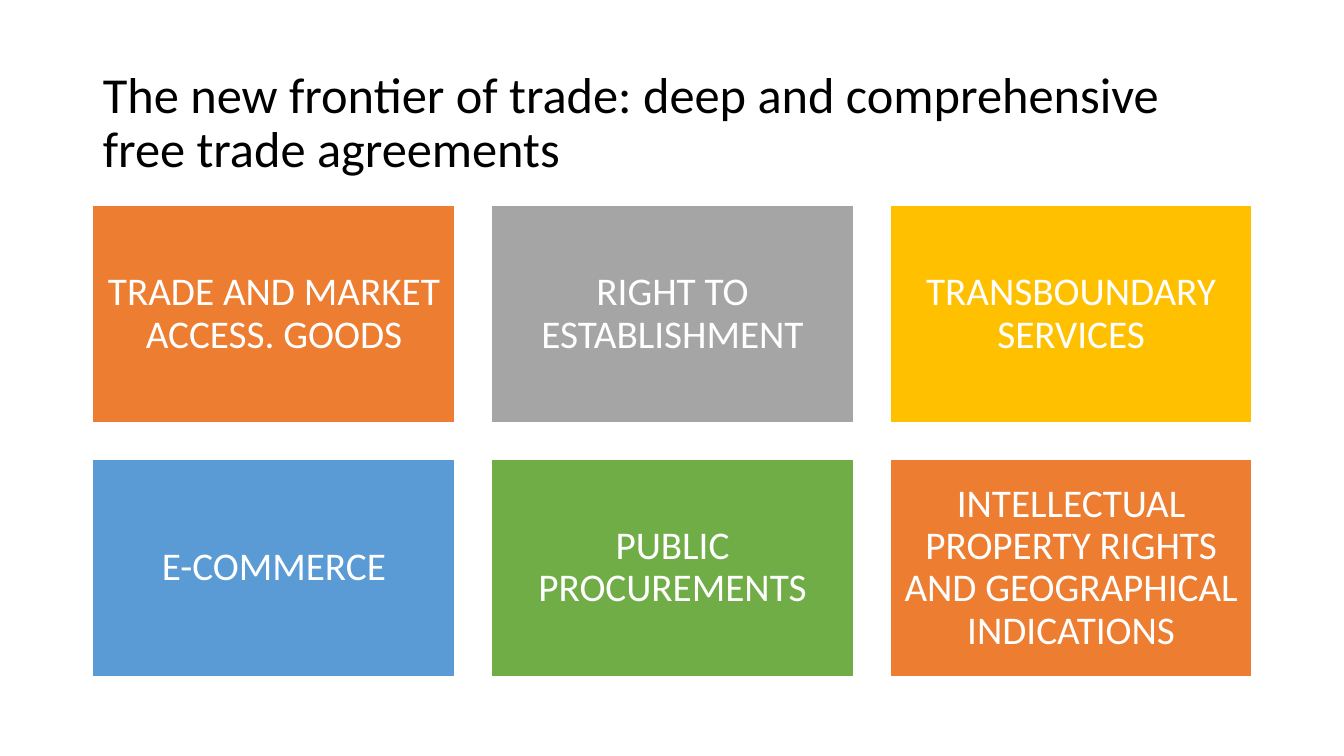
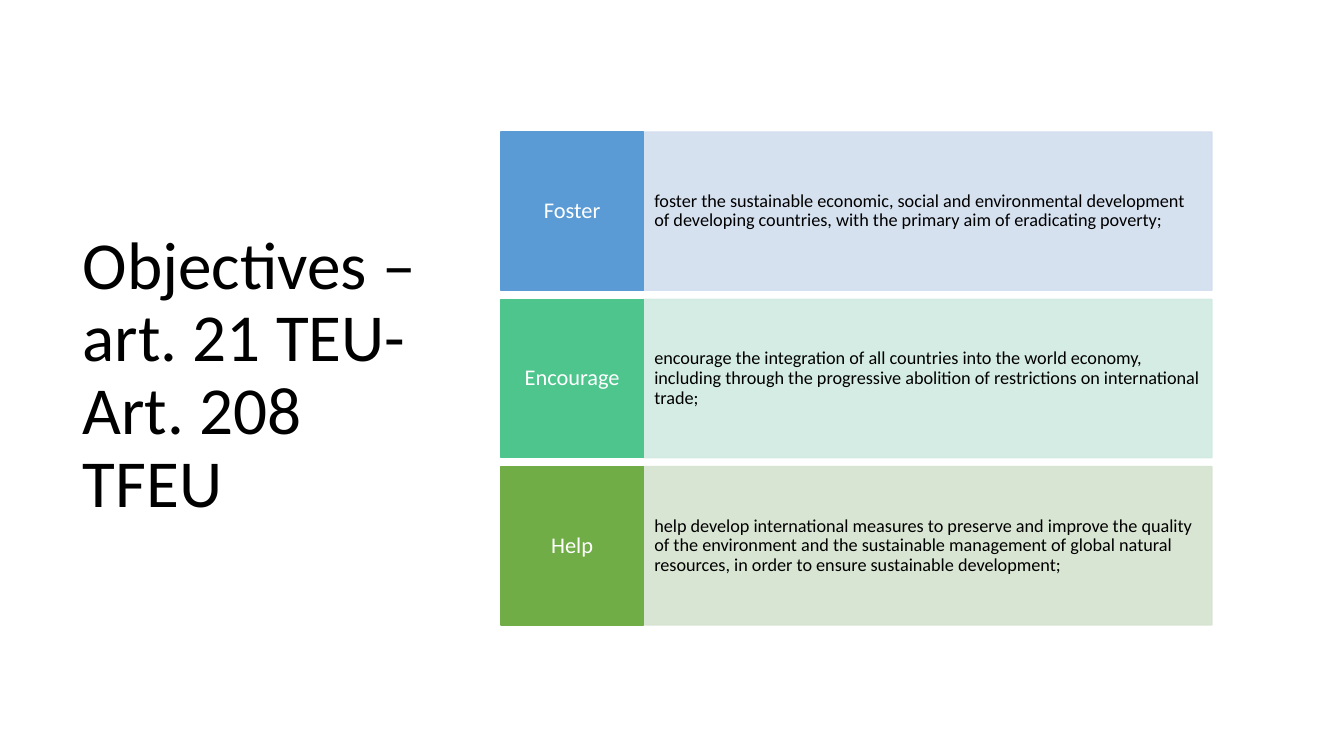
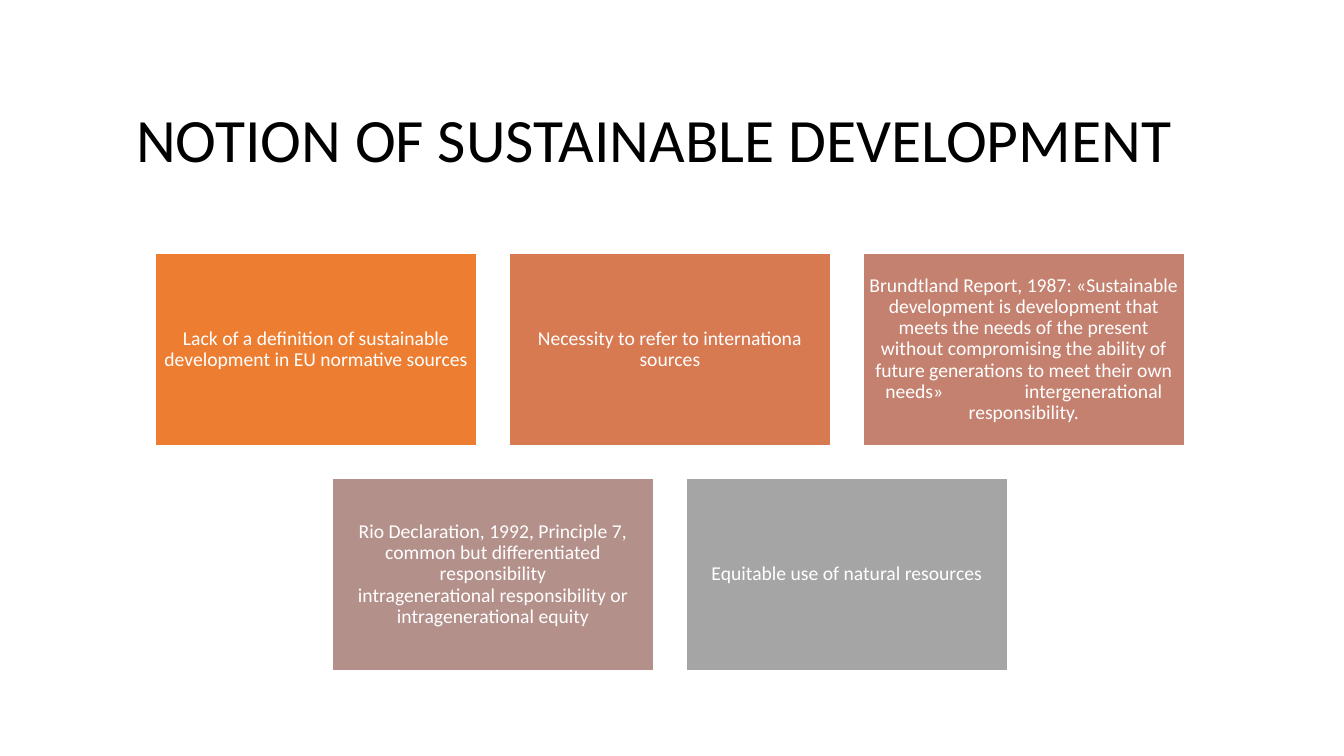
from lxml.etree import SubElement
from pptx import Presentation
from pptx.dml.color import RGBColor
from pptx.enum.shapes import MSO_SHAPE as Shape
from pptx.enum.text import MSO_ANCHOR as Anchor, MSO_AUTO_SIZE as AutoSize, PP_ALIGN as Align
from pptx.oxml.ns import qn
from pptx.util import Inches, Pt

FONT = "Calibri"
BLACK, WHITE = "000000", "FFFFFF"
ORANGE, GREY, GOLD = "ED7D31", "A5A5A5", "FFC000"
BLUE, GREEN, TEAL = "5B9BD5", "70AD47", "4DC58D"
TITLE_ONLY = 5
WIDE_GAP = 55

AGREEMENT_CARDS = [
    [("TRADE AND MARKET ACCESS. GOODS", ORANGE),
     ("RIGHT TO ESTABLISHMENT", GREY),
     ("TRANSBOUNDARY SERVICES", GOLD)],
    [("E-COMMERCE", BLUE),
     ("PUBLIC PROCUREMENTS", GREEN),
     ("INTELLECTUAL PROPERTY RIGHTS AND GEOGRAPHICAL INDICATIONS", ORANGE)],
]

OBJECTIVES = [
    ("Foster", BLUE, "D2DEEF",
     "foster the sustainable economic, social and environmental development of "
     "developing countries, with the primary aim of eradicating poverty;"),
    ("Encourage", TEAL, "D0EAE1",
     "encourage the integration of all countries into the world economy, including "
     "through the progressive abolition of restrictions on international trade;"),
    ("Help", GREEN, "D5E3CF",
     "help develop international measures to preserve and improve the quality of the "
     "environment and the sustainable management of global natural resources, in order "
     "to ensure sustainable development;"),
]

NOTION_CARDS = [
    [("Lack of a definition of sustainable development in EU normative sources", ORANGE),
     ("Necessity to refer to internationa sources", "D87A51"),
     (("Brundtland Report, 1987: «Sustainable development is development that meets the "
       "needs of the present without compromising the ability of future generations to "
       "meet their own needs»", " ", "intergenerational responsibility."), "C48170")],
    [(("Rio Declaration, 1992, Principle 7, common but differentiated responsibility", " ",
       "intragenerational responsibility or intragenerational equity"), "B4908B"),
     ("Equitable use of natural resources", GREY)],
]


def paint(target, color):
    """Set a font, or a solid fill, to a hex colour."""
    if hasattr(target, "solid"):
        target.solid()
        target.fore_color.rgb = RGBColor.from_string(color)
    else:
        target.color.rgb = RGBColor.from_string(color)


def fade(shape, percent):
    """Give the fill and the line of a shape the same opacity."""
    for color in shape._element.spPr.iter(qn("a:srgbClr")):
        SubElement(color, qn("a:alpha")).set("val", str(percent * 1000))


def write(frame, text, size, color, align):
    """Fill a frame with one paragraph; a piece that is a single space becomes a wide gap."""
    frame.word_wrap = True
    frame.auto_size = AutoSize.NONE
    frame.vertical_anchor = Anchor.MIDDLE
    para = frame.paragraphs[0]
    para.alignment = align
    para.line_spacing = 0.9
    for piece in (text,) if isinstance(text, str) else text:
        span = para.add_run()
        span.text = piece
        span.font.name = FONT
        span.font.size = Pt(size)
        paint(span.font, color)
        if piece == " ":
            span.font._element.set("spc", str(WIDE_GAP * 100))


def add_page(deck, title, box, size):
    """Add a slide with its title placed in the given box."""
    page = deck.slides.add_slide(deck.slide_layouts[TITLE_ONLY])
    holder = page.shapes.title
    holder.left, holder.top, holder.width, holder.height = map(Inches, box)
    write(holder.text_frame, title, size, BLACK, Align.LEFT)
    return page


def add_block(page, box, text, fill, line, size, insets, color=WHITE, align=Align.CENTER):
    """Add a filled rectangle with text and the given side and top insets."""
    block = page.shapes.add_shape(Shape.RECTANGLE, *map(Inches, box))
    block.shadow.inherit = False
    paint(block.fill, fill)
    paint(block.line.fill, line)
    block.line.width = Pt(1)
    frame = block.text_frame
    frame.margin_left = frame.margin_right = Inches(insets[0])
    frame.margin_top = frame.margin_bottom = Inches(insets[1])
    write(frame, text, size, color, align)
    return block


def add_card_grid(page, left, top, width, rows, size, inset):
    """Lay out rows of cards, three to the full width, with shorter rows centred."""
    card_width = width / 3.2
    card_height, gap = card_width * 0.6, card_width * 0.1
    for row_index, row in enumerate(rows):
        row_width = len(row) * (card_width + gap) - gap
        start = left + (width - row_width) / 2
        y = top + row_index * (card_height + gap)
        for index, (text, fill) in enumerate(row):
            box = (start + index * (card_width + gap), y, card_width, card_height)
            add_block(page, box, text, fill, WHITE, size, (inset, inset))


def add_objective_rows(page, left, top, width, objectives):
    """Stack rows that pair a coloured label with a pale description."""
    row_height, step = 1.57, 1.66
    label_width = width * 0.2
    for index, (label, strong, pale, detail) in enumerate(objectives):
        y = top + index * step
        detail_box = (left + label_width, y, width - label_width, row_height)
        panel = add_block(page, detail_box, detail, pale, pale, 13, (0.11, 0.4),
                          BLACK, Align.LEFT)
        fade(panel, 90)
        label_box = (left, y, label_width, row_height)
        add_block(page, label_box, label, strong, strong, 16, (0.07, 0.15))


def main():
    """Build the three slides and save the deck."""
    deck = Presentation()
    deck.slide_width, deck.slide_height = Inches(13.33), Inches(7.5)

    agreements = add_page(
        deck, "The new frontier of trade: deep and comprehensive free trade agreements",
        (0.92, 0.61, 11.5, 1.24), 36)
    add_card_grid(agreements, 0.92, 2.04, 11.5, AGREEMENT_CARDS, 28, 0.12)

    objectives = add_page(deck, "Objectives – art. 21 TEU- Art. 208 TFEU",
                          (0.72, 0.67, 3.68, 6.13), 48)
    add_objective_rows(objectives, 4.97, 1.31, 7.05, OBJECTIVES)

    notion = add_page(deck, "NOTION OF SUSTAINABLE DEVELOPMENT",
                      (1.25, 0.67, 10.8, 1.48), 44)
    add_card_grid(notion, 1.54, 2.51, 10.21, NOTION_CARDS, 14, 0.06)

    deck.save("out.pptx")


if __name__ == "__main__":
    main()
